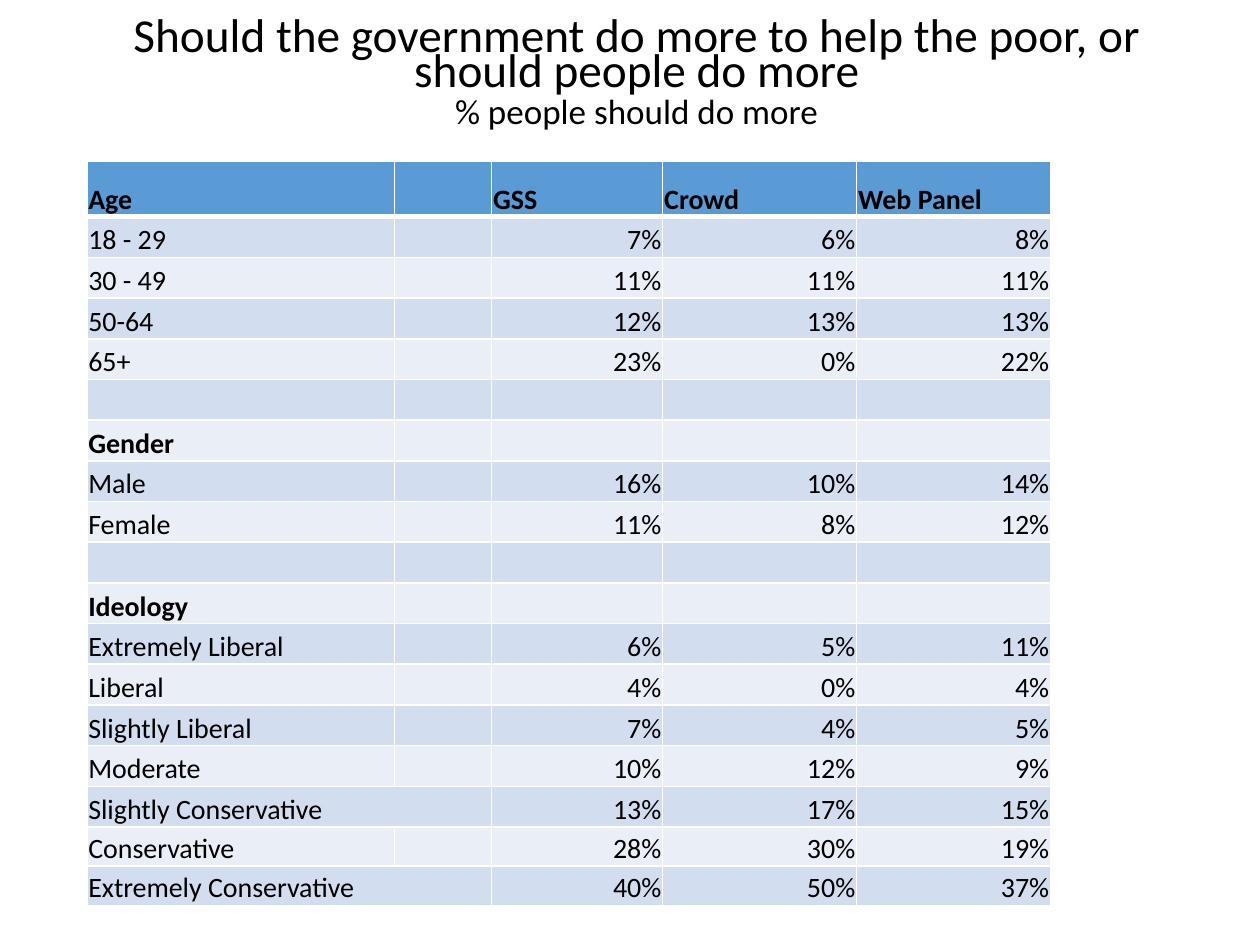
from dataclasses import dataclass
from lxml.etree import SubElement
from pptx import Presentation
from pptx.dml.color import RGBColor
from pptx.enum.text import MSO_ANCHOR, MSO_AUTO_SIZE, PP_ALIGN
from pptx.oxml.ns import qn
from pptx.util import Cm, Pt


@dataclass(frozen=True)
class Theme:
    font: str = "Calibri"
    text: str = "000000"
    header: str = "5B9BD5"
    bands: tuple = ("EAEFF7", "D2DEEF")
    border: str = "FFFFFF"
    title_size: int = 27
    subtitle_size: int = 20
    table_size: int = 16


THEME = Theme()
TITLE = "Should the government do more to help the poor, or should people do more"
SUBTITLE = "% people should do more"
SOURCES = ("GSS", "Crowd", "Web Panel")
GROUPS = {
    "Age": {
        "18 - 29": (7, 6, 8),
        "30 - 49": (11, 11, 11),
        "50-64": (12, 13, 13),
        "65+": (23, 0, 22),
    },
    "Gender": {
        "Male": (16, 10, 14),
        "Female": (11, 8, 12),
    },
    "Ideology": {
        "Extremely Liberal": (6, 5, 11),
        "Liberal": (4, 0, 4),
        "Slightly Liberal": (7, 4, 5),
        "Moderate": (10, 12, 9),
        "Slightly Conservative": (13, 17, 15),
        "Conservative": (28, 30, 19),
        "Extremely Conservative": (40, 50, 37),
    },
}
WIDE_LABELS = ("Slightly Conservative", "Extremely Conservative")
COLUMN_WIDTHS = (6.2, 1.96, 3.45, 3.91, 3.91)
HEADER_HEIGHT, ROW_HEIGHT, LAST_HEIGHT = 1.12, 0.82, 0.79


def apply_format(target, values):
    for name, value in values.items():
        setattr(target, name, value)


def add_span(para, text, size, bold=False):
    span = para.add_run()
    span.text = text
    apply_format(span.font, {"name": THEME.font, "size": Pt(size), "bold": bold})
    span.font.color.rgb = RGBColor.from_string(THEME.text)


def build_title(page, box):
    title = page.shapes.title
    apply_format(title, dict(zip(("left", "top", "width", "height"), box)))
    frame = title.text_frame
    apply_format(frame, {"word_wrap": True, "auto_size": MSO_AUTO_SIZE.NONE,
                         "vertical_anchor": MSO_ANCHOR.MIDDLE})
    para = frame.paragraphs[0]
    apply_format(para, {"alignment": PP_ALIGN.CENTER, "line_spacing": Pt(20),
                        "space_before": Pt(0)})
    add_span(para, TITLE, THEME.title_size)
    para.add_line_break()
    add_span(para, SUBTITLE, THEME.subtitle_size)


def table_rows():
    """List the rows as (texts, bold), with an empty row between groups."""
    rows = []
    for group, answers in GROUPS.items():
        if rows:
            rows.append(([""] * 5, False))
        heads = ("", "", "") if rows else SOURCES
        rows.append(([group, "", *heads], True))
        for label, shares in answers.items():
            rows.append(([label, "", *(f"{share}%" for share in shares)], False))
    return rows


def add_borders(cell, bottom_width):
    properties = cell._tc.get_or_add_tcPr()
    for side, width in (("L", 1), ("R", 1), ("T", 1), ("B", bottom_width)):
        line = SubElement(properties, qn(f"a:ln{side}"), w=str(Pt(width)))
        fill = SubElement(line, qn("a:solidFill"))
        SubElement(fill, qn("a:srgbClr"), val=THEME.border)


def fill_cell(cell, text, bold, color, is_header):
    apply_format(cell, {"margin_left": Cm(0.03), "margin_right": Cm(0.03),
                        "margin_top": Cm(0.03), "margin_bottom": 0,
                        "vertical_anchor": MSO_ANCHOR.BOTTOM})
    add_borders(cell, 3 if is_header else 1)
    cell.fill.solid()
    cell.fill.fore_color.rgb = RGBColor.from_string(color)
    para = cell.text_frame.paragraphs[0]
    if text:
        para.alignment = PP_ALIGN.RIGHT if text.endswith("%") else PP_ALIGN.LEFT
        add_span(para, text, THEME.table_size, bold)
    else:
        # Empty cells keep the table's type size, so rows do not grow
        SubElement(para._p, qn("a:endParaRPr"), sz=str(THEME.table_size * 100))


def build_table(page, box):
    rows = table_rows()
    table = page.shapes.add_table(len(rows), len(COLUMN_WIDTHS), *box).table
    for column, width in zip(table.columns, COLUMN_WIDTHS):
        column.width = Cm(width)
    heights = [HEADER_HEIGHT] + [ROW_HEIGHT] * (len(rows) - 3) + [LAST_HEIGHT] * 2
    for row, height in zip(table.rows, heights):
        row.height = Cm(height)

    for index, (texts, bold) in enumerate(rows):
        color = THEME.bands[index % 2] if index else THEME.header
        for cell, text in zip(table.rows[index].cells, texts):
            fill_cell(cell, text, bold, color, index == 0)
        # Long labels run over the empty second column
        if texts[0] in WIDE_LABELS:
            table.cell(index, 0).merge(table.cell(index, 1))


def main():
    deck = Presentation()
    apply_format(deck, {"slide_width": Cm(25.4), "slide_height": Cm(19.05)})
    page = deck.slides.add_slide(deck.slide_layouts[5])
    build_title(page, (Cm(1.75), Cm(0), Cm(22.17), Cm(3.2)))
    build_table(page, (Cm(1.75), Cm(3.25), Cm(19.43), Cm(15)))
    deck.save("out.pptx")


if __name__ == "__main__":
    main()
